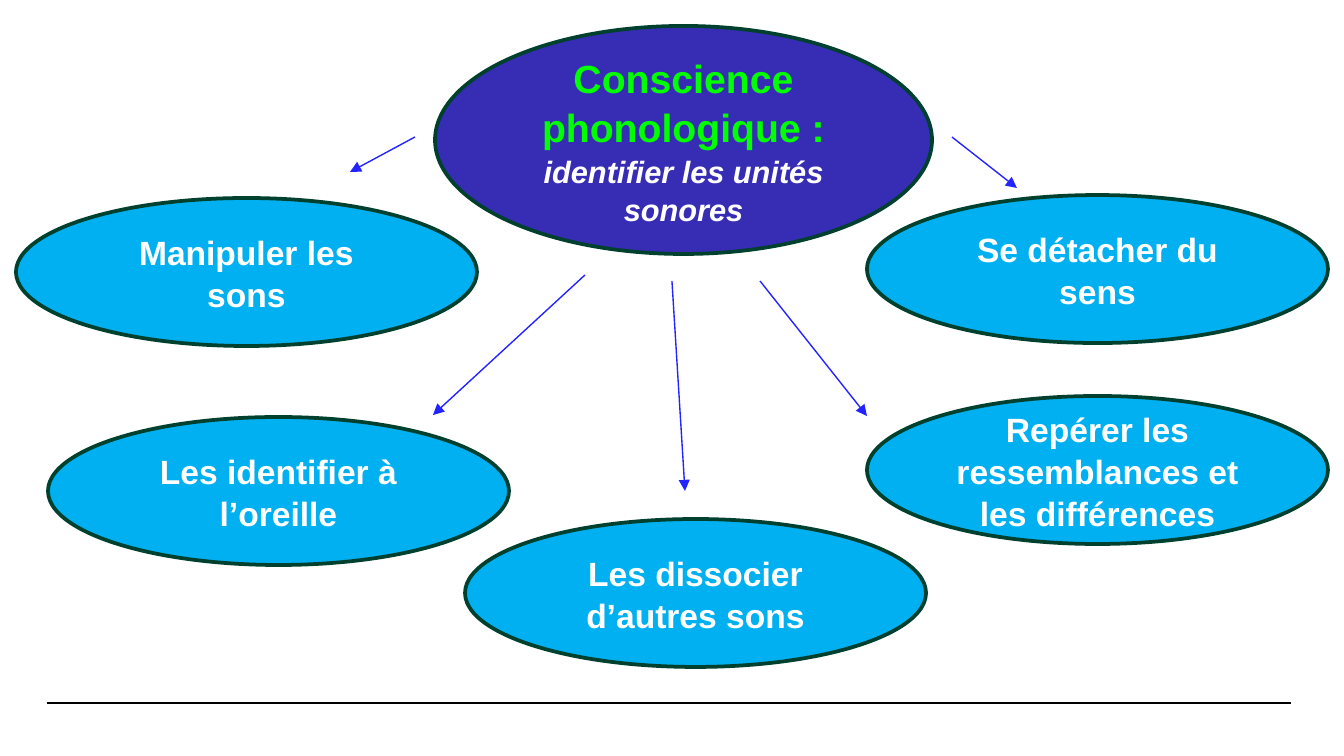
from lxml import etree
from pptx import Presentation
from pptx.dml.color import RGBColor
from pptx.enum.shapes import MSO_CONNECTOR, MSO_SHAPE
from pptx.enum.text import MSO_ANCHOR, PP_ALIGN
from pptx.oxml.ns import qn
from pptx.util import Pt

PX = 6804  # EMU per pixel, 134.4 pixels to the inch
OVAL = MSO_SHAPE.OVAL
STRAIGHT = MSO_CONNECTOR.STRAIGHT
MIDDLE = MSO_ANCHOR.MIDDLE
CENTER = PP_ALIGN.CENTER

COLORS = {
    "concept": "372DB5",
    "skill": "00B0F0",
    "outline": "00402F",
    "heading": "00FF00",
    "text": "FFFFFF",
    "arrow": "2323FF",
    "rule": "000000",
}


def add_bubble(box, fill, lines):
    """Add an ellipse; lines holds (text, size, color, italic) per paragraph."""
    bubble = slide.shapes.add_shape(OVAL, *(v * PX for v in box))
    bubble.shadow.inherit = False
    bubble.fill.solid()
    bubble.fill.fore_color.rgb = RGBColor.from_string(COLORS[fill])
    bubble.line.color.rgb = RGBColor.from_string(COLORS["outline"])
    bubble.line.width = Pt(2)
    frame = bubble.text_frame
    frame.word_wrap = True
    frame.vertical_anchor = MIDDLE
    frame.text = "\n".join(line[0] for line in lines)
    for paragraph, (_, size, color, italic) in zip(frame.paragraphs, lines):
        paragraph.alignment = CENTER
        paragraph.line_spacing = 1.05
        font = paragraph.runs[0].font
        font.name = "Arial"
        font.size = Pt(size)
        font.bold = True
        font.italic = italic
        font.color.rgb = RGBColor.from_string(COLORS[color])


def add_line(ends, color, width):
    line = slide.shapes.add_connector(STRAIGHT, *(v * PX for v in ends))
    line.line.color.rgb = RGBColor.from_string(COLORS[color])
    line.line.width = Pt(width)
    etree.SubElement(line._element.spPr, qn("a:effectLst"))
    return line


prs = Presentation()
prs.slide_width = 1344 * PX
prs.slide_height = 756 * PX
slide = prs.slides.add_slide(prs.slide_layouts[6])

# Footer rule
add_line((47, 703, 1291, 703), "rule", 0.8)

# Central concept
add_bubble((435, 26, 497, 228), "concept", [
    ("Conscience phonologique :", 21, "heading", False),
    ("identifier les unités sonores", 16.5, "text", True),
])

# Skills around it
SKILL_SIZE = (461, 148)
skills = [
    (16, 198, "Manipuler les sons"),
    (48, 417, "Les identifier à l’oreille"),
    (465, 519, "Les dissocier d’autres sons"),
    (867, 396, "Repérer les ressemblances et les différences"),
    (867, 195, "Se détacher du sens"),
]
for left, top, skill in skills:
    add_bubble((left, top, *SKILL_SIZE), "skill", [(skill, 18, "text", False)])

# Arrows from the concept towards each skill
arrows = [
    (415, 137, 350, 172),
    (585, 275, 433, 415),
    (672, 281, 685, 491),
    (760, 281, 867, 416),
    (952, 137, 1017, 188),
]
for ends in arrows:
    arrow = add_line(ends, "arrow", 0.75)
    etree.SubElement(arrow.line._get_or_add_ln(), qn("a:tailEnd"), type="triangle")

prs.save("out.pptx")
